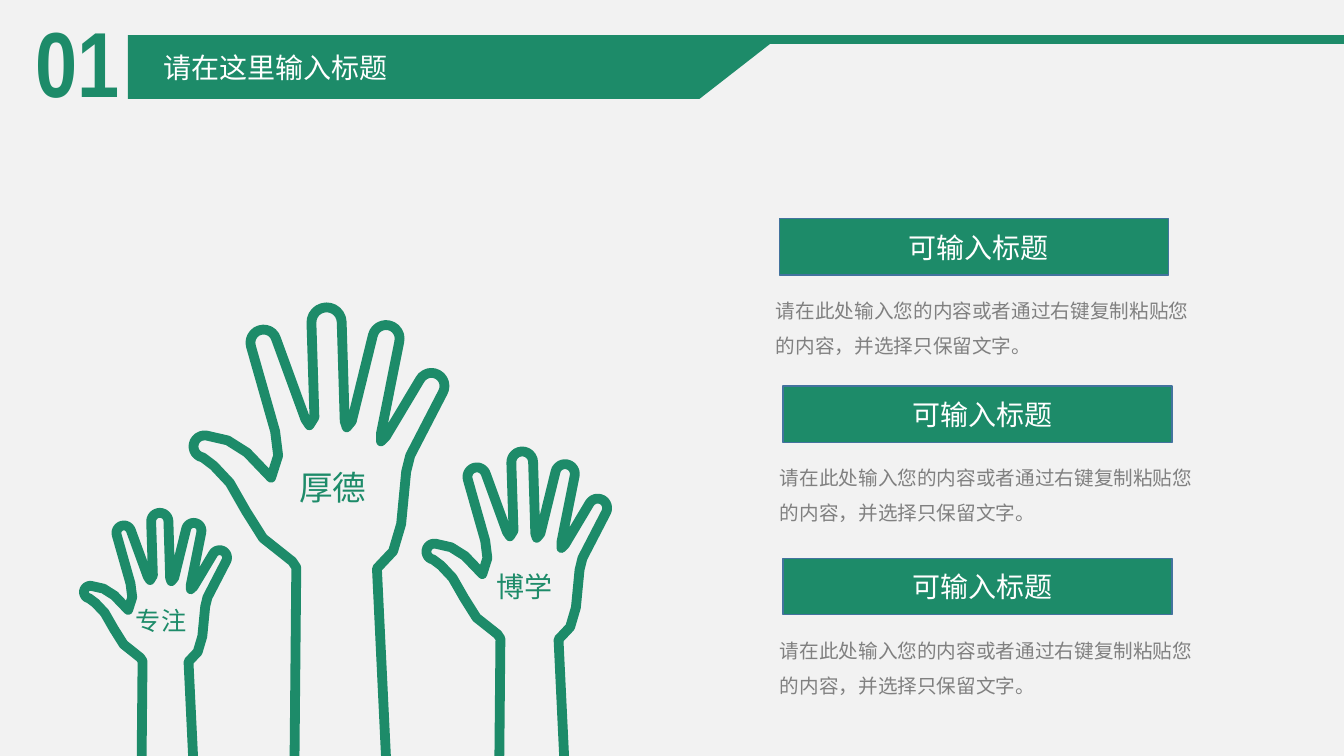
"""Build a slide with three raised hands and three titled text blocks."""
from dataclasses import dataclass
from math import cos, radians, sin

from lxml import etree
from pptx import Presentation
from pptx.dml.color import RGBColor
from pptx.enum.shapes import MSO_CONNECTOR, MSO_SHAPE
from pptx.enum.text import MSO_ANCHOR, MSO_AUTO_SIZE, PP_ALIGN
from pptx.oxml.ns import qn
from pptx.util import Pt

STRAIGHT = MSO_CONNECTOR.STRAIGHT
RECT = MSO_SHAPE.RECTANGLE
TOP = MSO_ANCHOR.TOP
GROW = MSO_AUTO_SIZE.SHAPE_TO_FIT_TEXT
LEFT = PP_ALIGN.LEFT


@dataclass(frozen=True)
class Theme:
    paper: RGBColor = RGBColor.from_string("F2F2F2")
    green: RGBColor = RGBColor.from_string("1D8B69")
    edge: RGBColor = RGBColor.from_string("43739E")
    white: RGBColor = RGBColor.from_string("FFFFFF")
    grey: RGBColor = RGBColor.from_string("808080")
    cjk: str = "Noto Sans CJK SC"
    latin: str = "Arial"
    narrow: str = "Arial Narrow"
    number: int = 66
    large: int = 24
    heading: int = 20
    small: int = 18
    body: int = 14


T = Theme()


def write(box, text, size, color, font=T.cjk, bold=False, spacing=1.0):
    tf = box.text_frame
    tf.word_wrap = True
    tf.auto_size = GROW
    tf.vertical_anchor = TOP
    p = tf.paragraphs[0]
    p.alignment = LEFT
    p.line_spacing = spacing
    r = p.add_run()
    r.text = text
    r.font.size = Pt(size)
    r.font.bold = bold
    r.font.name = font
    r.font.color.rgb = color
    etree.SubElement(r.font._element, qn("a:ea"), typeface=T.cjk)


def fingertip(x, y, radius, heading):
    angles = [radians(heading + step) for step in range(-90, 91, 15)]
    return [(x + radius * cos(a), y + radius * sin(a)) for a in angles]


prs = Presentation()
prs.slide_width, prs.slide_height = Pt(960), Pt(540)
s = prs.slides.add_slide(prs.slide_layouts[5])
s.background.fill.solid()
s.background.fill.fore_color.rgb = T.paper

rule = s.shapes.add_connector(STRAIGHT, Pt(488.2), Pt(28.1), Pt(960), Pt(28.1))
rule.line.color.rgb = T.green
rule.line.width = Pt(6)
etree.SubElement(rule.element.spPr, qn("a:effectLst"))

fb = s.shapes.build_freeform(Pt(91.4), Pt(25.2))
fb.add_line_segments([(Pt(x), Pt(y)) for x, y in ((558, 25.2), (499.7, 70.6), (91.4, 70.6))])
banner = fb.convert_to_shape()
banner.shadow.inherit = False
banner.fill.solid()
banner.fill.fore_color.rgb = T.green
banner.line.fill.background()

CONTENT = "请在此处输入您的内容或者通过右键复制粘贴您的内容，并选择只保留文字。"
for x, y in ((556.6, 156.2), (559.4, 275.8), (559.4, 398.9)):
    bar = s.shapes.add_shape(RECT, Pt(x), Pt(y), Pt(277.9), Pt(40.3))
    bar.shadow.inherit = False
    bar.fill.solid()
    bar.fill.fore_color.rgb = T.green
    bar.line.color.rgb = T.edge
    bar.line.width = Pt(1)
    detail = s.shapes.add_textbox(Pt(x - 9.4), Pt(y + 45.2), Pt(313.2), Pt(55.4))
    write(detail, CONTENT, T.body, T.grey, T.latin, spacing=1.5)
    heading = s.shapes.add_textbox(Pt(x + 85), Pt(y + 4.7), Pt(215.3), Pt(31.7))
    write(heading, "可输入标题", T.heading, T.white)

CENTER_X, CENTER_Y = 347.5, 540.5
HAND_UNIT = 0.72
TILT = 13.5
outline = [
    (292, 777), (294, 563), (290, 557), (261, 534), (244, 507), (228, 479), (212, 462),
    *fingertip(203, 443, 11, 190),
    (226, 437), (245, 449), (269, 474), (276, 452), (273, 428),
    *fingertip(261.5, 340, 13, 253),
    (303, 416), (307, 422), (312, 414),
    *fingertip(324, 320, 15, 268),
    (342, 418), (344, 424), (349, 418),
    *fingertip(383, 336, 13.5, 283),
    (378, 430), (378, 438), (383, 433),
    *fingertip(428, 383, 13, 300),
    (407, 452), (403, 468), (398, 520), (390, 547), (374, 564), (384, 773),
]
turn = radians(TILT)
offsets = [((x - CENTER_X) * HAND_UNIT, (y - CENTER_Y) * HAND_UNIT) for x, y in outline]
upright = [(x * cos(turn) - y * sin(turn), x * sin(turn) + y * cos(turn)) for x, y in offsets]

HANDS = [
    ("厚德", T.large, 250.2, 389.2, 1, 206.6, 329.8, 36),
    ("专注", T.small, 123.8, 463, 0.57, 90, 429.1, 28.8),
    ("博学", T.heading, 385.2, 444.6, 0.72, 347.8, 403.2, 31.7),
]
for word, size, cx, cy, scale, left, top, height in HANDS:
    group = s.shapes.add_group_shape()
    points = [(Pt(cx + x * scale), Pt(cy + y * scale)) for x, y in upright]
    fb = group.shapes.build_freeform(*points[0])
    fb.add_line_segments(points[1:], close=True)
    hand = fb.convert_to_shape()
    hand.rotation = 360 - TILT
    hand.shadow.inherit = False
    hand.fill.background()
    hand.line.color.rgb = T.green
    hand.line.width = Pt(7)
    label = group.shapes.add_textbox(Pt(left), Pt(top), Pt(96.5), Pt(height))
    write(label, word, size, T.green)

number = s.shapes.add_textbox(Pt(18), Pt(0), Pt(114.5), Pt(87.1))
write(number, "01", T.number, T.green, T.narrow, bold=True)

title = s.shapes.title
title.left, title.top, title.width, title.height = Pt(109.4), Pt(32.4), Pt(240.5), Pt(31.7)
write(title, "请在这里输入标题", T.heading, T.white)
s.shapes.element.append(title.element)

prs.save("out.pptx")
